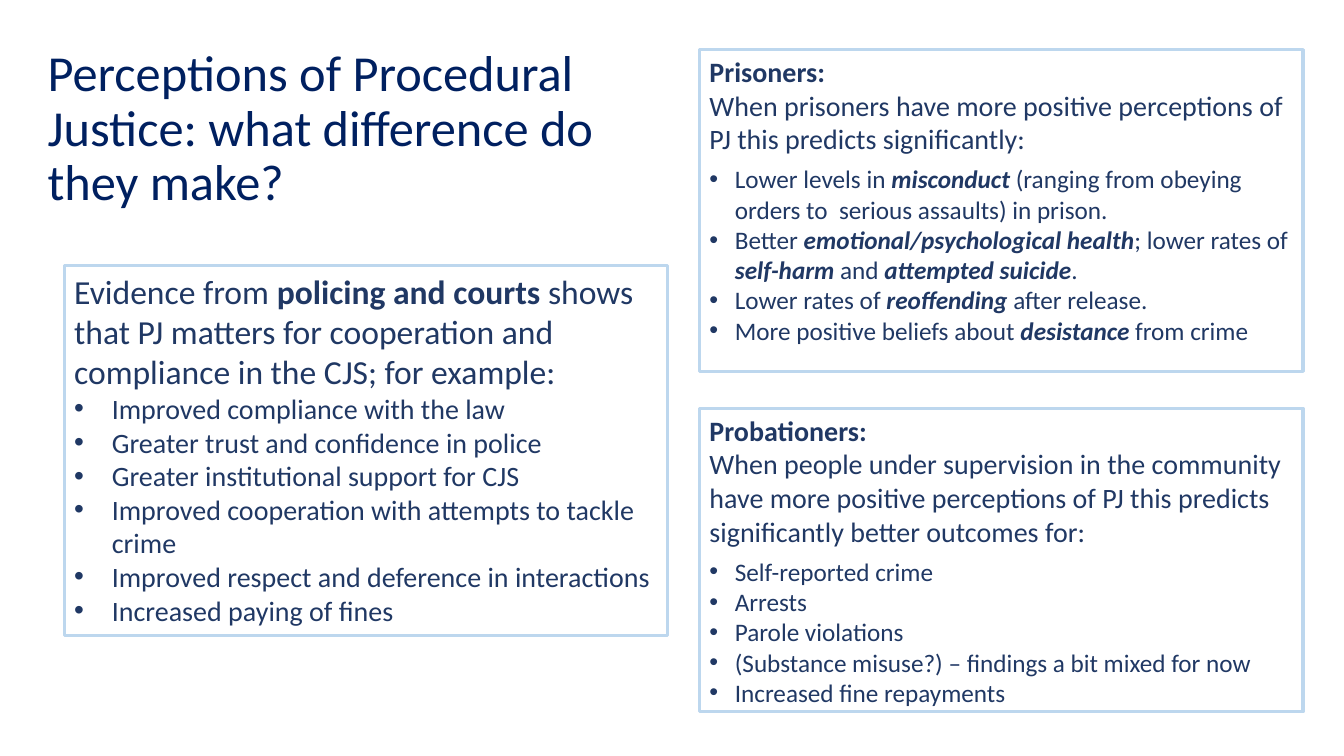
import pptx
import pptx.util
import pptx.dml.color
import pptx.enum.shapes
import pptx.enum.text
from lxml import etree
from pptx.util import Cm, Pt

COLOURS = {"title": "002060", "text": "203864", "border": "BDD7EE"}
FONT = "Calibri"
PANEL_WIDTH = 15.21
RIGHT_COLUMN = 17.63

POLICING = {
    "intro": ["Evidence from **policing and courts **shows that PJ matters for "
              "cooperation and compliance in the CJS; for example:"],
    "points": [
        "Improved compliance with the law",
        "Greater trust and confidence in police",
        "Greater institutional support for CJS",
        "Improved cooperation with attempts to tackle crime",
        "Improved respect and deference in interactions",
        "Increased paying of fines",
    ],
    "intro_size": 24, "point_size": 20, "indent": 0.95, "intro_gap": 0,
}
GROUP_STYLE = {"intro_size": 20, "point_size": 18, "indent": 0.64, "intro_gap": 6}
PRISONERS = {
    "intro": ["**Prisoners:**",
              "When prisoners have more positive perceptions of PJ this predicts significantly:"],
    "points": [
        "Lower levels in __misconduct__ (ranging from obeying orders to  serious assaults) in prison.",
        "Better __emotional/psychological health__; lower rates of __self-harm__ and "
        "__attempted suicide__.",
        "Lower rates of __reoffending__ after release.",
        "More positive beliefs about __desistance__ from crime",
    ],
    **GROUP_STYLE,
}
PROBATIONERS = {
    "intro": ["**Probationers:**",
              "When people under supervision in the community have more positive perceptions "
              "of PJ this predicts significantly better outcomes for:"],
    "points": [
        "Self-reported crime",
        "Arrests",
        "Parole violations",
        "(Substance misuse?) – findings a bit mixed for now",
        "Increased fine repayments",
    ],
    **GROUP_STYLE,
}


def rgb(name):
    return pptx.dml.color.RGBColor.from_string(COLOURS[name])


def apply_format(target, values):
    for attribute, value in values.items():
        setattr(target, attribute, value)


def write_runs(paragraph, marked_text, size, colour="text"):
    """Write text in which ** encloses bold and __ encloses bold italic."""
    mark = "__" if "__" in marked_text else "**"
    for position, piece in enumerate(marked_text.split(mark)):
        if not piece:
            continue
        emphasised = position % 2 == 1
        run = paragraph.add_run()
        run.text = piece
        apply_format(run.font, {"name": FONT, "size": Pt(size), "bold": emphasised,
                                "italic": emphasised and mark == "__"})
        run.font.color.rgb = rgb(colour)


def add_bullet(paragraph, indent):
    properties = paragraph._p.get_or_add_pPr()
    properties.set("marL", str(Cm(indent)))
    properties.set("indent", str(-Cm(indent)))
    for tag, attribute, value in (("a:buFont", "typeface", "Arial"), ("a:buChar", "char", "•")):
        etree.SubElement(properties, pptx.oxml.ns.qn(tag)).set(attribute, value)


def add_title(slide, left, top, width, height):
    frame = slide.shapes.add_textbox(Cm(left), Cm(top), Cm(width), Cm(height)).text_frame
    apply_format(frame, {"word_wrap": True,
                         "vertical_anchor": pptx.enum.text.MSO_ANCHOR.MIDDLE})
    heading = frame.paragraphs[0]
    heading.line_spacing = 0.9
    write_runs(heading, "Perceptions of Procedural Justice: what difference do they make?",
               36, "title")


def add_evidence_panel(slide, evidence, left, top, width, height):
    panel = slide.shapes.add_shape(pptx.enum.shapes.MSO_SHAPE.RECTANGLE,
                                   Cm(left), Cm(top), Cm(width), Cm(height))
    panel.shadow.inherit = False
    panel.fill.background()
    panel.line.color.rgb = rgb("border")
    panel.line.width = Pt(2.25)

    frame = panel.text_frame
    apply_format(frame, {"word_wrap": True, "vertical_anchor": pptx.enum.text.MSO_ANCHOR.TOP})
    entries = evidence["intro"] + evidence["points"]
    intro_count = len(evidence["intro"])
    for number, entry in enumerate(entries):
        paragraph = frame.add_paragraph() if number else frame.paragraphs[0]
        apply_format(paragraph, {
            "alignment": pptx.enum.text.PP_ALIGN.LEFT,
            "space_after": Pt(evidence["intro_gap"] if number == intro_count - 1 else 0),
        })
        is_point = number >= intro_count
        if is_point:
            add_bullet(paragraph, evidence["indent"])
        write_runs(paragraph, entry, evidence["point_size" if is_point else "intro_size"])


def main():
    deck = pptx.Presentation()
    apply_format(deck, {"slide_width": Cm(33.87), "slide_height": Cm(19.05)})
    slide = deck.slides.add_slide(deck.slide_layouts[6])
    add_title(slide, 0.95, 2.12, 15.9, 2.31)
    add_evidence_panel(slide, POLICING, 1.62, 6.69, PANEL_WIDTH, 9.32)
    add_evidence_panel(slide, PROBATIONERS, RIGHT_COLUMN, 10.29, PANEL_WIDTH, 7.65)
    add_evidence_panel(slide, PRISONERS, RIGHT_COLUMN, 1.25, PANEL_WIDTH, 8.11)
    deck.save("out.pptx")


if __name__ == "__main__":
    main()
